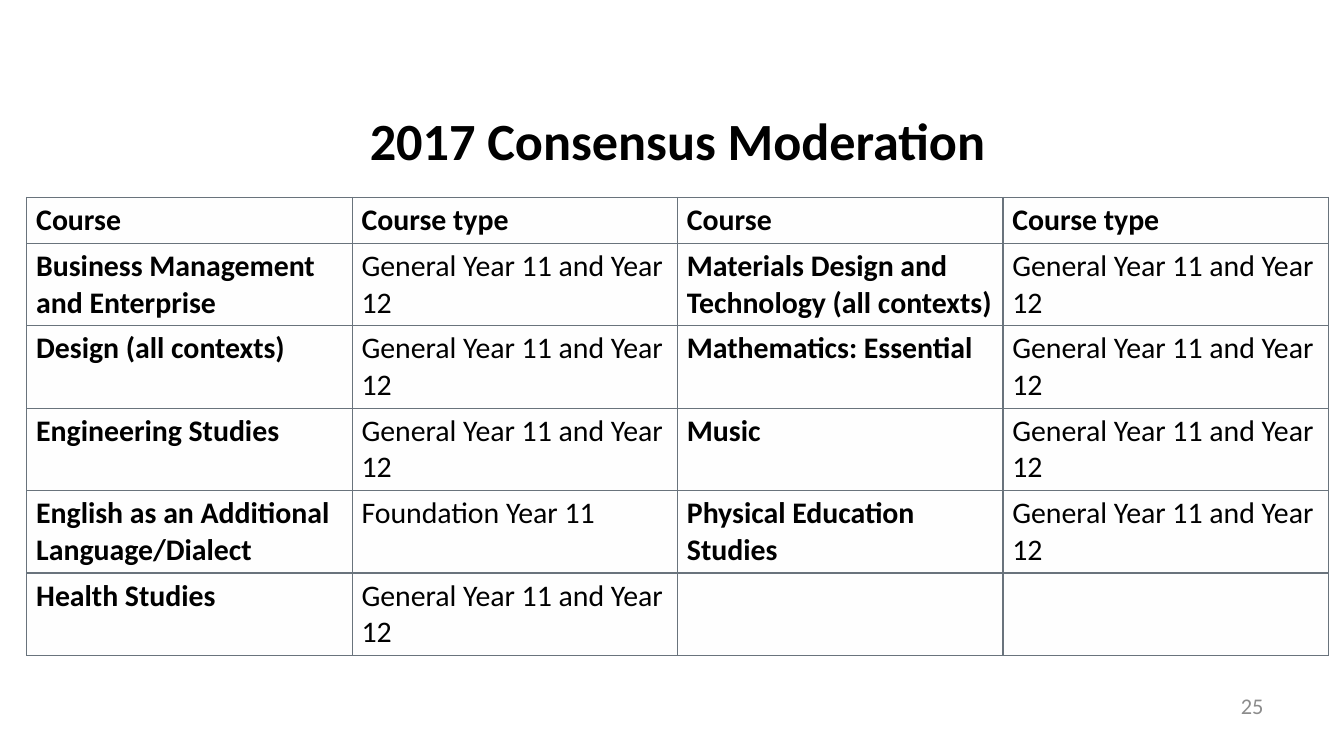
import pptx
import pptx.dml.color
import pptx.enum.text
import pptx.oxml
import pptx.oxml.ns
import pptx.util
from dataclasses import dataclass

PX = 4572  # EMU in one px, at 200 px to the inch


@dataclass(frozen=True)
class Theme:
    font: str = "Calibri"
    ink: str = "000000"
    muted: str = "8C8C8C"
    cell: str = "FEFEFE"
    border: str = "69737C"
    border_pt: float = 0.75
    title_pt: int = 28
    body_pt: int = 16
    number_pt: int = 12


THEME = Theme()
ALIGN = pptx.enum.text.PP_ALIGN
MIDDLE = pptx.enum.text.MSO_ANCHOR.MIDDLE

GENERAL = "General Year 11 and Year 12"
ROWS = [
    ("Course", "Course type", "Course", "Course type"),
    ("Business Management and Enterprise", GENERAL,
     "Materials Design and Technology (all contexts)", GENERAL),
    ("Design (all contexts)", GENERAL, "Mathematics: Essential", GENERAL),
    ("Engineering Studies", GENERAL, "Music", GENERAL),
    ("English as an Additional Language/Dialect", "Foundation Year 11",
     "Physical Education Studies", GENERAL),
    ("Health Studies", GENERAL, "", ""),
]


def px(n):
    return pptx.util.Emu(n * PX)


def rgb(color):
    return pptx.dml.color.RGBColor.from_string(color)


def set_attrs(obj, values):
    for name, value in values.items():
        setattr(obj, name, value)


def write(tf, text, size, color, bold=False, align=ALIGN.LEFT):
    p = tf.paragraphs[0]
    p.alignment = align
    if not text:
        return
    r = p.add_run()
    r.text = text
    set_attrs(r.font, {"name": THEME.font, "size": pptx.util.Pt(size), "bold": bold})
    r.font.color.rgb = rgb(color)


def place(sp, box):
    set_attrs(sp, dict(zip(("left", "top", "width", "height"), map(px, box))))


def add_title(s, box, text):
    sp = s.shapes.title
    place(sp, box)
    set_attrs(sp.text_frame, {"word_wrap": True, "vertical_anchor": MIDDLE})
    write(sp.text_frame, text, THEME.title_pt, THEME.ink, True, ALIGN.CENTER)


def add_borders(cell):
    # Border lines must precede the fill in the cell properties
    tc_pr = cell._tc.get_or_add_tcPr()
    for i, side in enumerate("LRTB"):
        tc_pr.insert(i, pptx.oxml.parse_xml(
            f'<a:ln{side} {pptx.oxml.ns.nsdecls("a")} w="{pptx.util.Pt(THEME.border_pt)}">'
            f'<a:solidFill><a:srgbClr val="{THEME.border}"/></a:solidFill></a:ln{side}>'))


def add_course_table(s, box, rows, header_height):
    left, top, width, height = box
    table = s.shapes.add_table(len(rows), len(rows[0]), *map(px, box)).table
    set_attrs(table, {"first_row": False, "horz_banding": False})
    for col in table.columns:
        col.width = px(width) // len(rows[0])
    body_height = (height - header_height) // (len(rows) - 1)
    for i, texts in enumerate(rows):
        table.rows[i].height = px(body_height if i else header_height)
        for j, text in enumerate(texts):
            cell = table.cell(i, j)
            set_attrs(cell, {"margin_left": px(14), "margin_right": px(14),
                             "margin_top": px(7), "margin_bottom": px(7)})
            cell.fill.solid()
            cell.fill.fore_color.rgb = rgb(THEME.cell)
            add_borders(cell)
            # The header row and the course names are bold
            write(cell.text_frame, text, THEME.body_pt, THEME.ink, i == 0 or j % 2 == 0)


def add_page_number(s, box, number):
    sp = s.shapes.add_textbox(*map(px, box))
    set_attrs(sp.text_frame, {"word_wrap": True, "vertical_anchor": MIDDLE})
    write(sp.text_frame, number, THEME.number_pt, THEME.muted, align=ALIGN.RIGHT)


def main():
    prs = pptx.Presentation()
    set_attrs(prs, {"slide_width": px(2000), "slide_height": px(1125)})
    s = prs.slides.add_slide(prs.slide_layouts.get_by_name("Title Only"))

    add_title(s, (108, 122, 1800, 172), "2017 Consensus Moderation")
    add_course_table(s, (40, 294, 1937, 678), ROWS, header_height=68)
    add_page_number(s, (1434, 1020, 466, 60), "25")

    prs.save("out.pptx")


if __name__ == "__main__":
    main()
